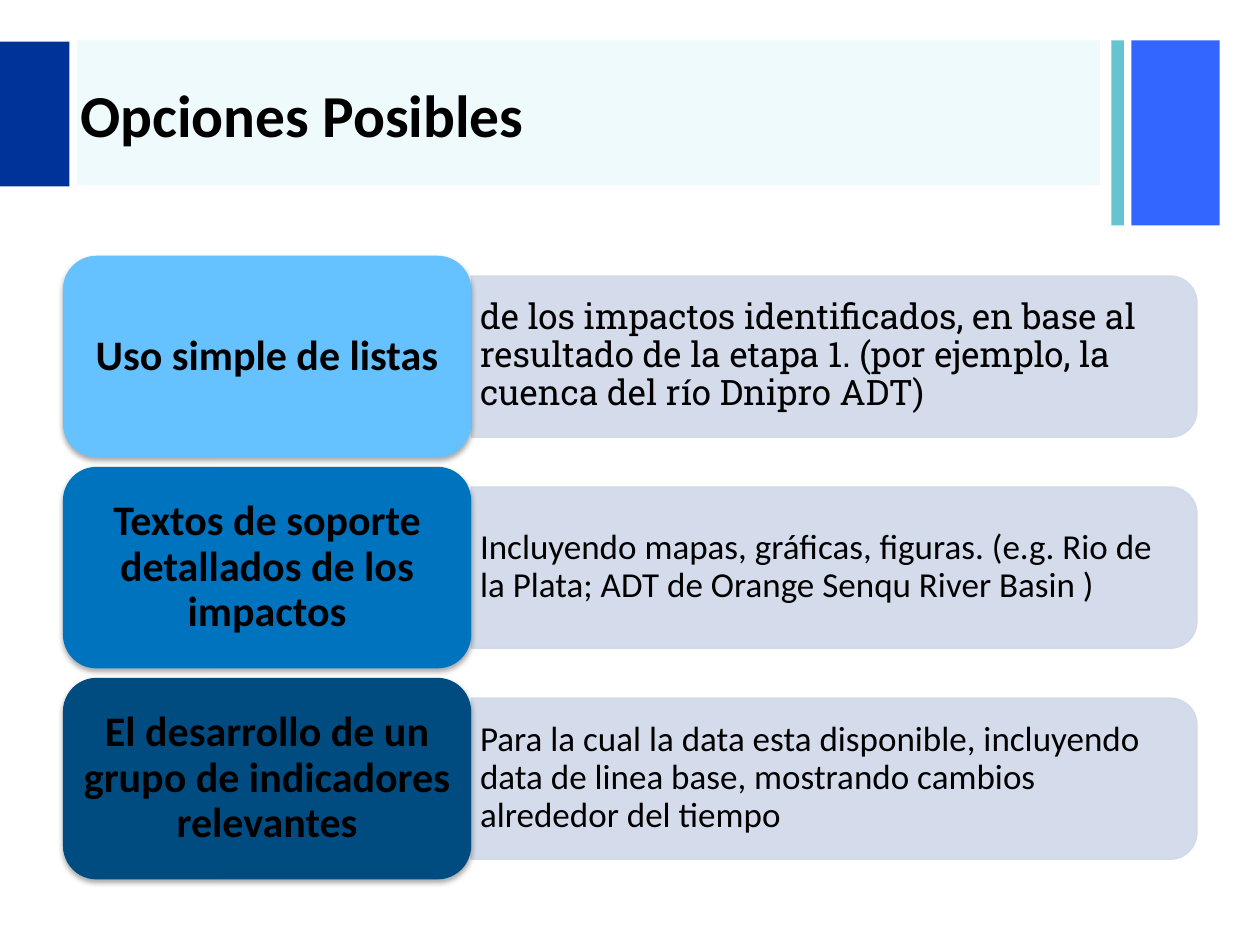
"""Build the slide of possible options."""
from typing import NamedTuple

from lxml.etree import SubElement
from pptx import Presentation
from pptx.dml.color import RGBColor
from pptx.enum.shapes import MSO_SHAPE
from pptx.enum.text import MSO_ANCHOR, PP_ALIGN
from pptx.oxml.ns import qn
from pptx.util import Inches, Pt

COLORS = {
    "black": "000000", "royal": "3366FF", "teal": "65C4D2", "aqua": "14C5D0",
    "navy": "003399", "gray": "D0D8E8", "light": "66C2FF", "mid": "0073BF",
    "dark": "004C80",
}
TOP, PITCH, HEIGHT = 2.03, 1.675, 1.6
LEFT, WIDTH = 0.5, 3.24
BAR_W, BAR_H = 5.76, 1.28


class Box(NamedTuple):
    left: float
    top: float
    width: float
    height: float


class Block(NamedTuple):
    box: Box
    color: str
    alpha: int = 100


class Row(NamedTuple):
    label: str
    color: str
    body: str
    font: str = "Calibri"


BLOCKS = [
    Block(Box(8.98, 0.32, 0.7, 1.47), "royal"),
    Block(Box(8.82, 0.32, 0.1, 1.47), "teal"),
    Block(Box(0.61, 0.32, 8.12, 1.15), "aqua", 7),
    Block(Box(0, 0.33, 0.55, 1.15), "navy"),
]
ROWS = [
    Row("Uso simple de listas", "light",
        "de los impactos identificados, en base al resultado de la etapa 1. "
        "(por ejemplo, la cuenca del río Dnipro ADT)", "Roboto Slab"),
    Row("Textos de soporte detallados de los impactos", "mid",
        "Incluyendo mapas, gráficas, figuras. (e.g. Rio de la Plata; "
        "ADT de Orange Senqu River Basin )"),
    Row("El desarrollo de un grupo de indicadores relevantes", "dark",
        "Para la cual la data esta disponible, incluyendo data de linea base, "
        "mostrando cambios alrededor del tiempo"),
]


def place(box: Box) -> list:
    """Return the box as lengths."""
    return [Inches(side) for side in box]


def paint(fill, color: str, alpha: int = 100) -> None:
    """Give a fill a solid color and its opacity in percent."""
    fill.solid()
    fill.fore_color.rgb = RGBColor.from_string(COLORS[color])
    if alpha < 100:
        tone = fill._xPr.find(qn("a:solidFill"))[0]
        SubElement(tone, qn("a:alpha"), val=str(alpha * 1000))


def draw(slide, kind, box: Box, color: str, alpha: int = 100):
    """Add a filled shape without line or shadow."""
    shape = slide.shapes.add_shape(kind, *place(box))
    shape.shadow.inherit = False
    paint(shape.fill, color, alpha)
    shape.line.fill.background()
    return shape


def shade(shape) -> None:
    """Add a soft shadow below a shape."""
    group = shape._element.spPr.find(qn("a:effectLst"))
    outer = SubElement(group, qn("a:outerShdw"), blurRad=str(Pt(3.1)),
                       dist=str(Pt(1.8)), dir="5400000", rotWithShape="0")
    tone = SubElement(outer, qn("a:srgbClr"), val=COLORS["black"])
    SubElement(tone, qn("a:alpha"), val="35000")


def write(shape, text: str, size: int, font: str = "Calibri",
          bold: bool = False, align=PP_ALIGN.LEFT, space: float = 0.9,
          side: float = 0.1, edge: float = 0.05) -> None:
    """Set and format the text of a shape."""
    frame = shape.text_frame
    frame.text = text
    frame.word_wrap = True
    frame.vertical_anchor = MSO_ANCHOR.MIDDLE
    frame.margin_left = frame.margin_right = Inches(side)
    frame.margin_top = frame.margin_bottom = Inches(edge)
    line = frame.paragraphs[0]
    line.alignment = align
    line.line_spacing = space
    style = line.runs[0].font
    style.size, style.name, style.bold = Pt(size), font, bold
    style.color.rgb = RGBColor.from_string(COLORS["black"])


def add_row(slide, row: Row, top: float) -> None:
    """Draw a body bar with its label card."""
    right, mid = LEFT + WIDTH, top + HEIGHT / 2
    turned = Box(right + (BAR_W - BAR_H) / 2, mid - BAR_W / 2, BAR_H, BAR_W)
    bar = draw(slide, MSO_SHAPE.ROUND_2_SAME_RECTANGLE, turned, "gray", 90)
    bar.rotation = 90
    paint(bar.line.fill, "gray", 90)
    bar.line.width = Pt(0.75)
    body = slide.shapes.add_textbox(*place(Box(right, mid - 0.58, 5.7, 1.15)))
    write(body, row.body, 20, row.font, side=0.07, edge=0.03)
    card = draw(slide, MSO_SHAPE.ROUNDED_RECTANGLE,
                Box(LEFT, top, WIDTH, HEIGHT), row.color)
    shade(card)
    write(card, row.label, 24, bold=True, align=PP_ALIGN.CENTER,
          side=0.08, edge=0.04)


def main() -> None:
    """Build and save the deck."""
    deck = Presentation()
    deck.slide_width, deck.slide_height = Inches(10), Inches(7.5)
    slide = deck.slides.add_slide(deck.slide_layouts[6])
    for block in BLOCKS:
        draw(slide, MSO_SHAPE.RECTANGLE, *block)
    title = slide.shapes.add_textbox(*place(Box(0.54, 0.34, 8.27, 1.12)))
    write(title, "Opciones Posibles", 34, bold=True, space=1.0)
    for index, row in enumerate(ROWS):
        add_row(slide, row, TOP + index * PITCH)
    deck.save("out.pptx")


if __name__ == "__main__":
    main()
